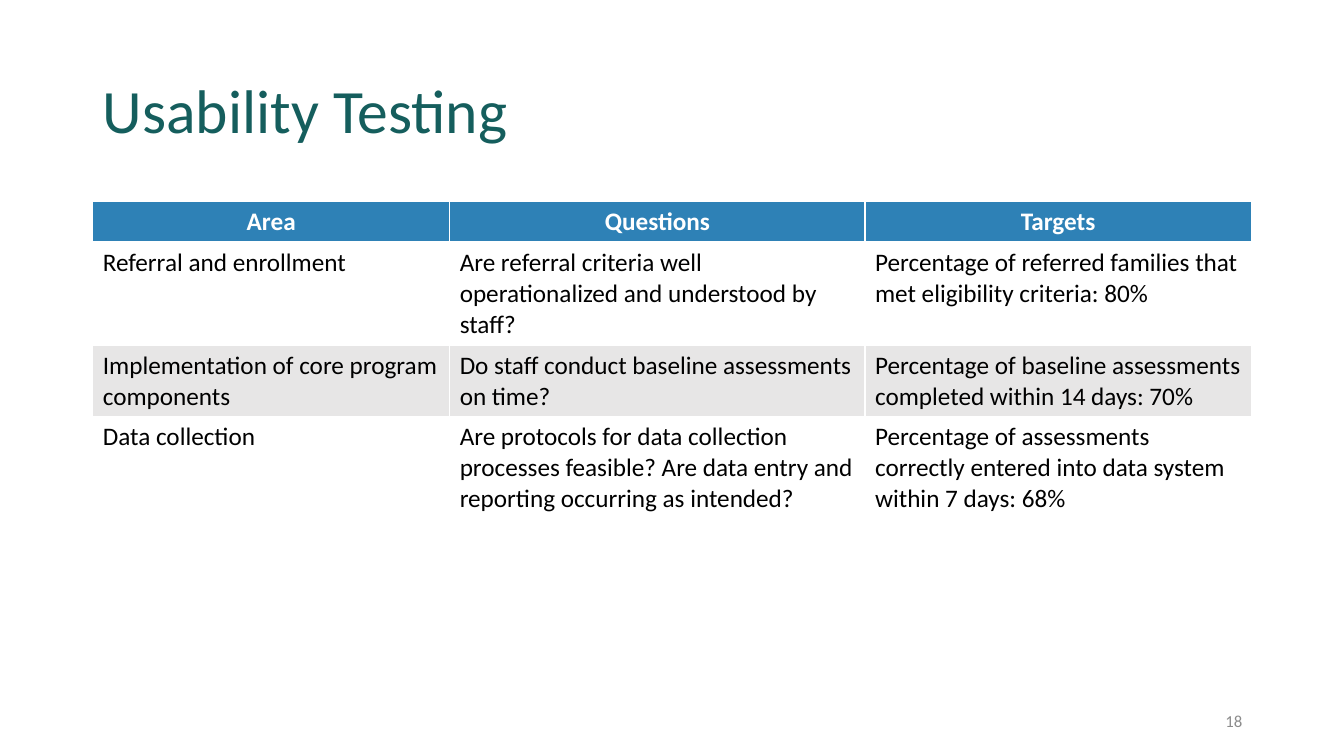
import pptx
import pptx.dml.color
import pptx.enum.text
import pptx.oxml
import pptx.oxml.ns
import pptx.util

Inches = pptx.util.Inches
Pt = pptx.util.Pt
RGBColor = pptx.dml.color.RGBColor
Align = pptx.enum.text.PP_ALIGN
Anchor = pptx.enum.text.MSO_ANCHOR

WHITE = RGBColor(0xFF, 0xFF, 0xFF)
BLACK = RGBColor(0, 0, 0)
TEAL = RGBColor(0x15, 0x5E, 0x5D)
BLUE = RGBColor(0x2E, 0x81, 0xB6)
LIGHT_GRAY = RGBColor(0xE7, 0xE6, 0xE6)
NUMBER_GRAY = RGBColor(0x8C, 0x8C, 0x8C)

COLUMN_WIDTHS = [3.54, 4.12, 3.83]
ROW_HEIGHTS = [0.41, 1, 0.7, 1]
TESTING_ROWS = [
    ["Area", "Questions", "Targets"],
    ["Referral and enrollment",
     "Are referral criteria well operationalized and understood by staff?",
     "Percentage of referred families that met eligibility criteria: 80%"],
    ["Implementation of core program components",
     "Do staff conduct baseline assessments on time?",
     "Percentage of baseline assessments completed within 14 days: 70%"],
    ["Data collection",
     "Are protocols for data collection processes feasible? "
     "Are data entry and reporting occurring as intended?",
     "Percentage of assessments correctly entered into data system within 7 days: 68%"],
]


class SlideBuilder:
    font_name = "Calibri"

    def __init__(self, deck):
        self.page = deck.slides.add_slide(deck.slide_layouts[5])

    def add_text(self, frame, text, size, color, align=Align.LEFT, bold=False, spacing=1.0):
        frame.word_wrap = True
        para = frame.paragraphs[0]
        para.alignment = align
        para.line_spacing = spacing
        span = para.add_run()
        span.text = text
        formats = {"name": self.font_name, "size": Pt(size), "bold": bold}
        for name, value in formats.items():
            setattr(span.font, name, value)
        span.font.color.rgb = color

    def title(self, text, left, top, width, height):
        box = self.page.shapes.title
        place = {"left": left, "top": top, "width": width, "height": height}
        for name, value in place.items():
            setattr(box, name, Inches(value))
        box.text_frame.vertical_anchor = Anchor.MIDDLE
        self.add_text(box.text_frame, text, 44, TEAL, spacing=0.9)

    def label(self, text, left, top, width, height):
        box = self.page.shapes.add_textbox(*map(Inches, (left, top, width, height)))
        box.text_frame.vertical_anchor = Anchor.MIDDLE
        self.add_text(box.text_frame, text, 12, NUMBER_GRAY, Align.RIGHT)

    def borders(self, cell, bottom):
        properties = cell._tc.get_or_add_tcPr()
        widths = {"lnL": 1, "lnR": 1, "lnT": 1, "lnB": bottom}
        for index, (side, width) in enumerate(widths.items()):
            line = pptx.oxml.parse_xml(
                f'<a:{side} {pptx.oxml.ns.nsdecls("a")} w="{Pt(width)}">'
                f'<a:solidFill><a:srgbClr val="{WHITE}"/></a:solidFill></a:{side}>')
            properties.insert(index, line)

    def table(self, rows, left, top, widths, heights):
        frame = self.page.shapes.add_table(
            len(rows), len(widths), Inches(left), Inches(top),
            Inches(sum(widths)), Inches(sum(heights)))
        grid = frame.table
        for column, width in zip(grid.columns, widths):
            column.width = Inches(width)
        for row_index, (row, height) in enumerate(zip(grid.rows, heights)):
            row.height = Inches(height)
            header = row_index == 0
            stripe = LIGHT_GRAY if row_index % 2 == 0 else WHITE
            for cell, text in zip(row.cells, rows[row_index]):
                cell.fill.solid()
                cell.fill.fore_color.rgb = BLUE if header else stripe
                self.borders(cell, 3 if header else 1)
                self.add_text(cell.text_frame, text, 18, WHITE if header else BLACK,
                              Align.CENTER if header else Align.LEFT, header)


def main():
    deck = pptx.Presentation()
    deck.slide_width = Inches(13.33)
    deck.slide_height = Inches(7.5)
    builder = SlideBuilder(deck)
    builder.title("Usability Testing", 0.92, 0.4, 11.5, 1.45)
    builder.table(TESTING_ROWS, 0.92, 2, COLUMN_WIDTHS, ROW_HEIGHTS)
    builder.label("18", 9.42, 6.95, 3, 0.4)
    deck.save("out.pptx")


if __name__ == "__main__":
    main()
